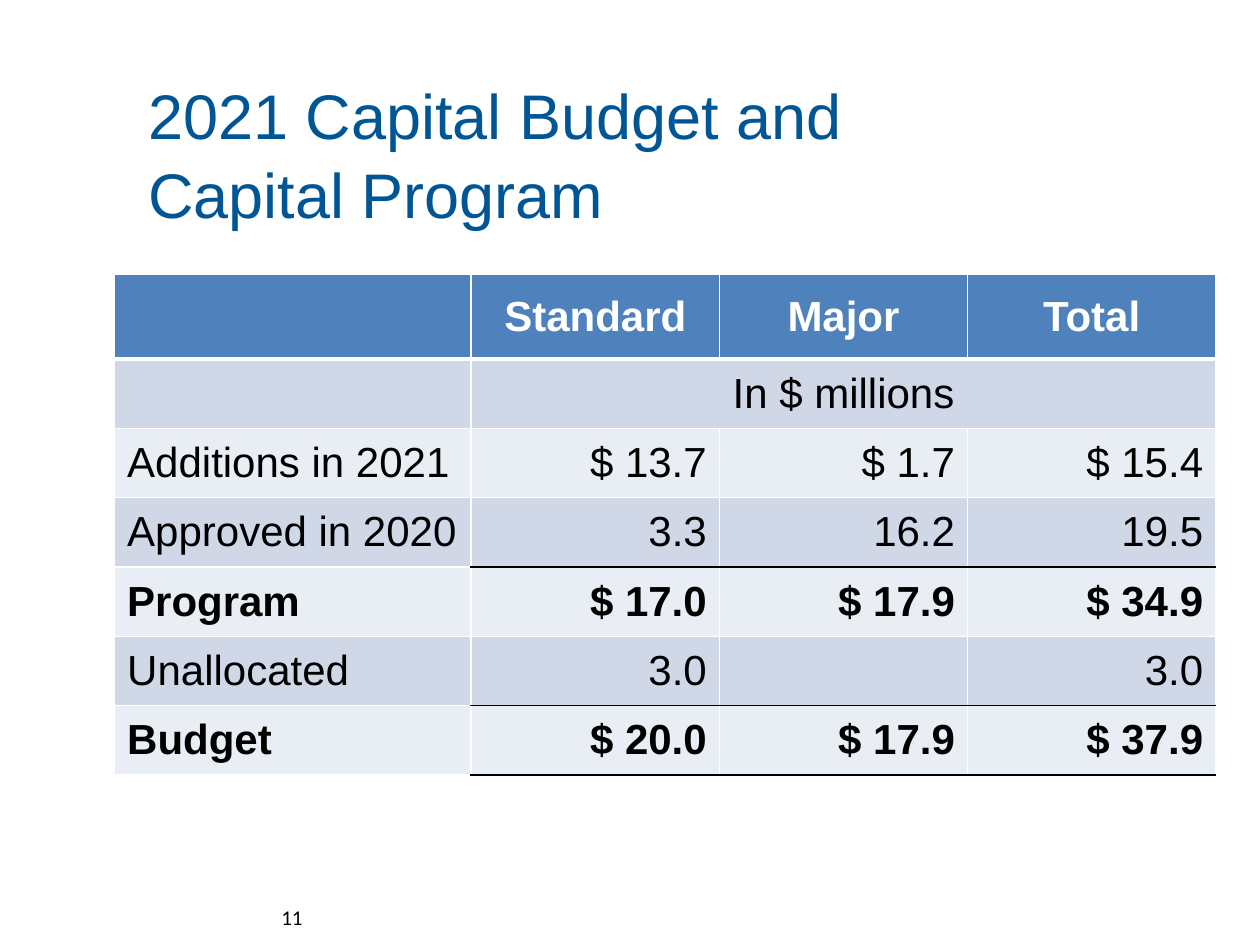
from lxml import etree
from pptx import Presentation
from pptx.dml.color import RGBColor
from pptx.enum.text import MSO_ANCHOR, PP_ALIGN
from pptx.oxml.ns import qn
from pptx.util import Emu, Pt

PX = 9144  # EMU in one px, 100 px to the inch
LEFT, CENTER, RIGHT = PP_ALIGN.LEFT, PP_ALIGN.CENTER, PP_ALIGN.RIGHT
MIDDLE = MSO_ANCHOR.MIDDLE

WHITE = RGBColor(0xFF, 0xFF, 0xFF)
BLACK = RGBColor(0, 0, 0)
NAVY = RGBColor(0x00, 0x55, 0x95)
BLUE = RGBColor(0x4F, 0x81, 0xBD)
BANDS = RGBColor(0xE9, 0xED, 0xF4), RGBColor(0xD0, 0xD8, 0xE8)

ROWS = [
    ["", "Standard", "Major", "Total"],
    ["", "In $ millions", "", ""],
    ["Additions in 2021", "$ 13.7", "$ 1.7", "$ 15.4"],
    ["Approved in 2020", "3.3", "16.2", "19.5"],
    ["Program", "$ 17.0", "$ 17.9", "$ 34.9"],
    ["Unallocated", "3.0", "", "3.0"],
    ["Budget", "$ 20.0", "$ 17.9", "$ 37.9"],
]
WIDTHS = [283, 197, 197, 197]
HEIGHTS = [67] + [55] * 6
BOLD = {0, 4, 6}
RULED = {3, 5, 6}  # rows with a black line below their numbers


def px(*sizes):
    return [Emu(size * PX) for size in sizes]


def write(frame, text, align, color, **look):
    """Fill the frame with one paragraph; a line feed is a soft break."""
    para = frame.paragraphs[0]
    para.alignment = align
    for i, line in enumerate(text.split("\n")):
        if i:
            para.add_line_break()
        run = para.add_run()
        run.text = line
        run.font.color.rgb = color
        for name, value in look.items():
            setattr(run.font, name, value)
    return para


def add_text(slide, box, text, align, color, **look):
    frame = slide.shapes.add_textbox(*px(*box)).text_frame
    frame.word_wrap = True
    frame.vertical_anchor = MIDDLE
    return write(frame, text, align, color, **look)


def add_edge(cell, side, color, width):
    props = cell._tc.get_or_add_tcPr()
    line = etree.SubElement(props, qn(f"a:ln{side}"), w=str(Pt(width)))
    fill = etree.SubElement(line, qn("a:solidFill"))
    etree.SubElement(fill, qn("a:srgbClr"), val=str(color))


def edge_below(row, col):
    if row == 0:
        return WHITE, 3
    return (BLACK if row in RULED and col else WHITE), 1


def style_cell(cell, row, col):
    above = edge_below(row - 1, col) if row else (WHITE, 1)
    edges = {"L": (WHITE, 1), "R": (WHITE, 1),
             "T": above, "B": edge_below(row, col)}
    for side, edge in edges.items():
        add_edge(cell, side, *edge)
    cell.fill.solid()
    cell.fill.fore_color.rgb = BANDS[row % 2] if row else BLUE
    cell.vertical_anchor = MIDDLE


def add_budget(slide):
    box = px(91, 218, sum(WIDTHS), sum(HEIGHTS))
    table = slide.shapes.add_table(len(ROWS), len(WIDTHS), *box).table
    for col, width in zip(table.columns, px(*WIDTHS)):
        col.width = width
    for row, height in zip(table.rows, px(*HEIGHTS)):
        row.height = height
    for r, texts in enumerate(ROWS):
        for c, text in enumerate(texts):
            cell = table.cell(r, c)
            style_cell(cell, r, c)
            if text:
                align = CENTER if r < 2 else RIGHT if c else LEFT
                write(cell.text_frame, text, align, BLACK if r else WHITE,
                      name="Arial", size=Pt(24), bold=r in BOLD)
    table.cell(1, 1).merge(table.cell(1, 3))


def main():
    deck = Presentation()
    deck.slide_width, deck.slide_height = px(1000, 750)
    slide = deck.slides.add_slide(deck.slide_layouts[6])
    title = add_text(slide, (108, 58, 900, 125),
                     "2021 Capital Budget and\nCapital Program",
                     LEFT, NAVY, name="Arial", size=Pt(36))
    title.line_spacing = 1.05
    add_budget(slide)
    add_text(slide, (108, 708, 142, 40), "11", RIGHT, BLACK,
             name="Calibri", size=Pt(12))
    deck.save("out.pptx")


if __name__ == "__main__":
    main()
